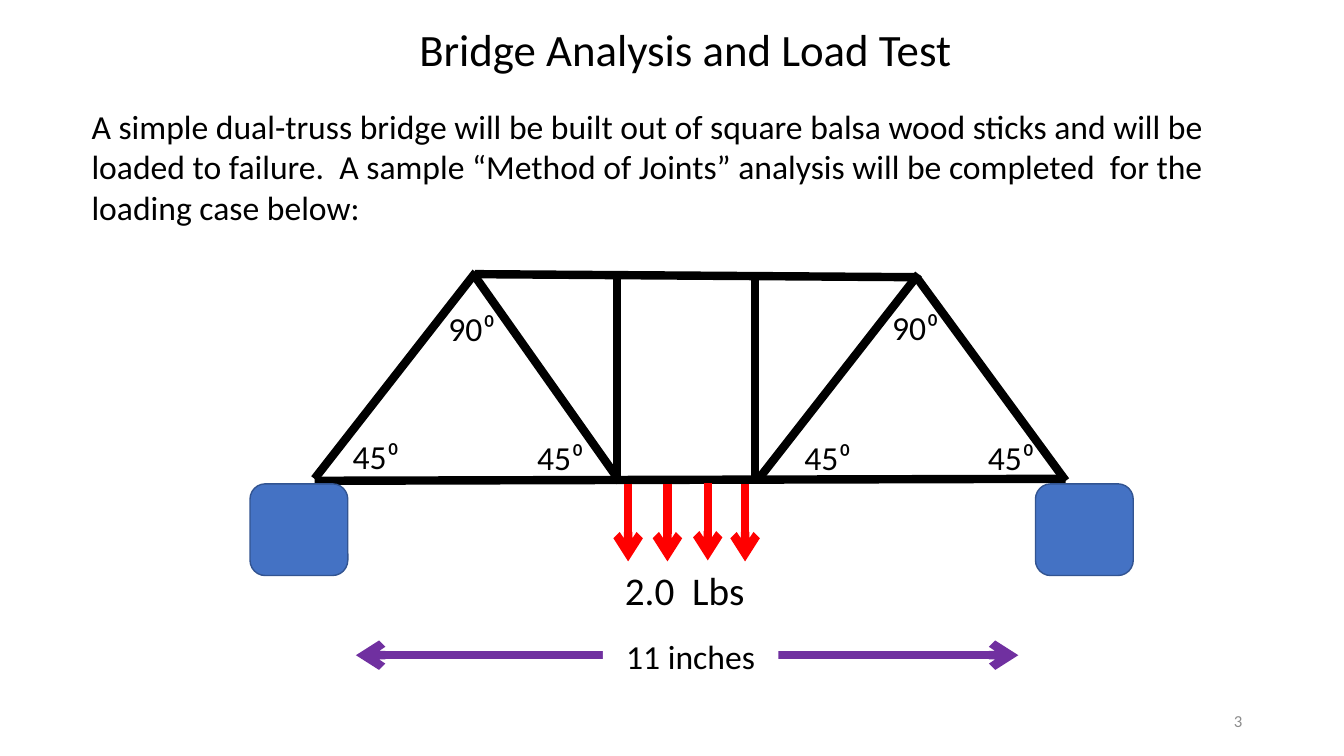
from dataclasses import dataclass

from lxml import etree
from pptx import Presentation
from pptx.dml.color import RGBColor
from pptx.enum.shapes import MSO_CONNECTOR, MSO_SHAPE
from pptx.enum.text import MSO_ANCHOR, PP_ALIGN
from pptx.oxml.ns import qn
from pptx.slide import Slide
from pptx.util import Inches, Pt

STRAIGHT = MSO_CONNECTOR.STRAIGHT
ROUND = MSO_SHAPE.ROUNDED_RECTANGLE
LEFT, CENTER, RIGHT = PP_ALIGN.LEFT, PP_ALIGN.CENTER, PP_ALIGN.RIGHT
TOP, MIDDLE = MSO_ANCHOR.TOP, MSO_ANCHOR.MIDDLE


@dataclass(frozen=True)
class Theme:
    font: str = "Calibri"
    ink: str = "000000"
    paper: str = "FFFFFF"
    block: str = "4472C4"
    edge: str = "325491"
    load: str = "FF0000"
    span: str = "7030A0"
    gray: str = "8C8C8C"
    title: int = 32
    force: int = 28
    body: int = 24
    small: int = 12
    thick: int = 6
    thin: int = 1


@dataclass(frozen=True)
class Line:
    x1: float
    y1: float
    x2: float
    y2: float
    color: str
    ends: tuple[str, ...] = ()


@dataclass(frozen=True)
class Label:
    text: str
    x: float
    y: float
    w: float
    h: float
    size: int
    align: PP_ALIGN = LEFT
    anchor: MSO_ANCHOR = TOP
    color: str = "000000"
    fill: str = ""


THEME = Theme()
INTRO = (
    "A simple dual-truss bridge will be built out of square balsa wood sticks "
    "and will be loaded to failure.  A sample “Method of Joints” analysis will "
    "be completed  for the loading case below:"
)

MEMBERS = [
    (3.12, 4.77, 10.57, 4.75),  # bottom chord
    (4.71, 2.72, 9.09, 2.75),  # top chord
    (3.12, 4.75, 4.72, 2.7),  # diagonals
    (7.51, 4.77, 9.11, 2.72),
    (6.15, 4.78, 4.71, 2.74),
    (10.57, 4.77, 9.09, 2.75),
    (6.12, 4.78, 6.12, 2.71),  # posts
    (7.49, 4.78, 7.49, 2.7),
]
LOADS = [(6.23, 4.8), (6.62, 4.8), (7.02, 4.79), (7.39, 4.8)]
BLOCKS = [2.48, 10.27]
ANGLES = [
    ("45⁰", 3.4, 4.28),
    ("45⁰", 5.23, 4.29),
    ("45⁰", 7.88, 4.29),
    ("45⁰", 9.7, 4.29),
    ("90⁰", 4.35, 3.01),
    ("90⁰", 8.75, 3.0),
]

LINES = [Line(*ends, THEME.ink) for ends in MEMBERS]
LINES += [Line(x, y, x, y + 0.77, THEME.load, ("tailEnd",)) for x, y in LOADS]
LINES.append(Line(3.53, 6.5, 10.1, 6.5, THEME.span, ("headEnd", "tailEnd")))

LABELS = [
    Label("Bridge Analysis and Load Test", 3.71, 0.17, 6.18, 0.64, THEME.title, CENTER),
    Label(INTRO, 0.81, 1, 11.33, 1.31, THEME.body),
    Label("2.0  Lbs", 6.1, 5.57, 1.6, 0.57, THEME.force),
    Label("11 inches", 5.98, 6.26, 1.74, 0.5, THEME.body, CENTER, fill=THEME.paper),
    Label("3", 9.42, 6.95, 3, 0.4, THEME.small, RIGHT, MIDDLE, THEME.gray),
]
LABELS += [Label(text, x, y, 0.73, 0.5, THEME.body) for text, x, y in ANGLES]


def rgb(code: str) -> RGBColor:
    return RGBColor.from_string(code)


def draw_line(slide: Slide, line: Line) -> None:
    places = (Inches(v) for v in (line.x1, line.y1, line.x2, line.y2))
    shape = slide.shapes.add_connector(STRAIGHT, *places)
    shape.line.color.rgb = rgb(line.color)
    shape.line.width = Pt(THEME.thick)
    props = shape._element.spPr
    for end in line.ends:
        etree.SubElement(props.find(qn("a:ln")), qn(f"a:{end}"), type="arrow")
    etree.SubElement(props, qn("a:effectLst"))


def draw_block(slide: Slide, x: float) -> None:
    """Draw one support under an end of the bridge."""
    shape = slide.shapes.add_shape(
        ROUND, Inches(x), Inches(4.8), Inches(0.97), Inches(0.91)
    )
    shape.shadow.inherit = False
    shape.fill.solid()
    shape.fill.fore_color.rgb = rgb(THEME.block)
    shape.line.color.rgb = rgb(THEME.edge)
    shape.line.width = Pt(THEME.thin)


def draw_label(slide: Slide, label: Label) -> None:
    places = (Inches(v) for v in (label.x, label.y, label.w, label.h))
    box = slide.shapes.add_textbox(*places)
    if label.fill:
        box.fill.solid()
        box.fill.fore_color.rgb = rgb(label.fill)
    frame = box.text_frame
    frame.word_wrap = True
    frame.vertical_anchor = label.anchor
    frame.text = label.text
    para = frame.paragraphs[0]
    para.alignment = label.align
    font = para.runs[0].font
    font.name = THEME.font
    font.size = Pt(label.size)
    font.color.rgb = rgb(label.color)


def main() -> None:
    deck = Presentation()
    deck.slide_width = Inches(13.33)
    deck.slide_height = Inches(7.5)
    slide = deck.slides.add_slide(deck.slide_layouts[6])
    for line in LINES:
        draw_line(slide, line)
    for x in BLOCKS:
        draw_block(slide, x)
    for label in LABELS:
        draw_label(slide, label)
    deck.save("out.pptx")


if __name__ == "__main__":
    main()
